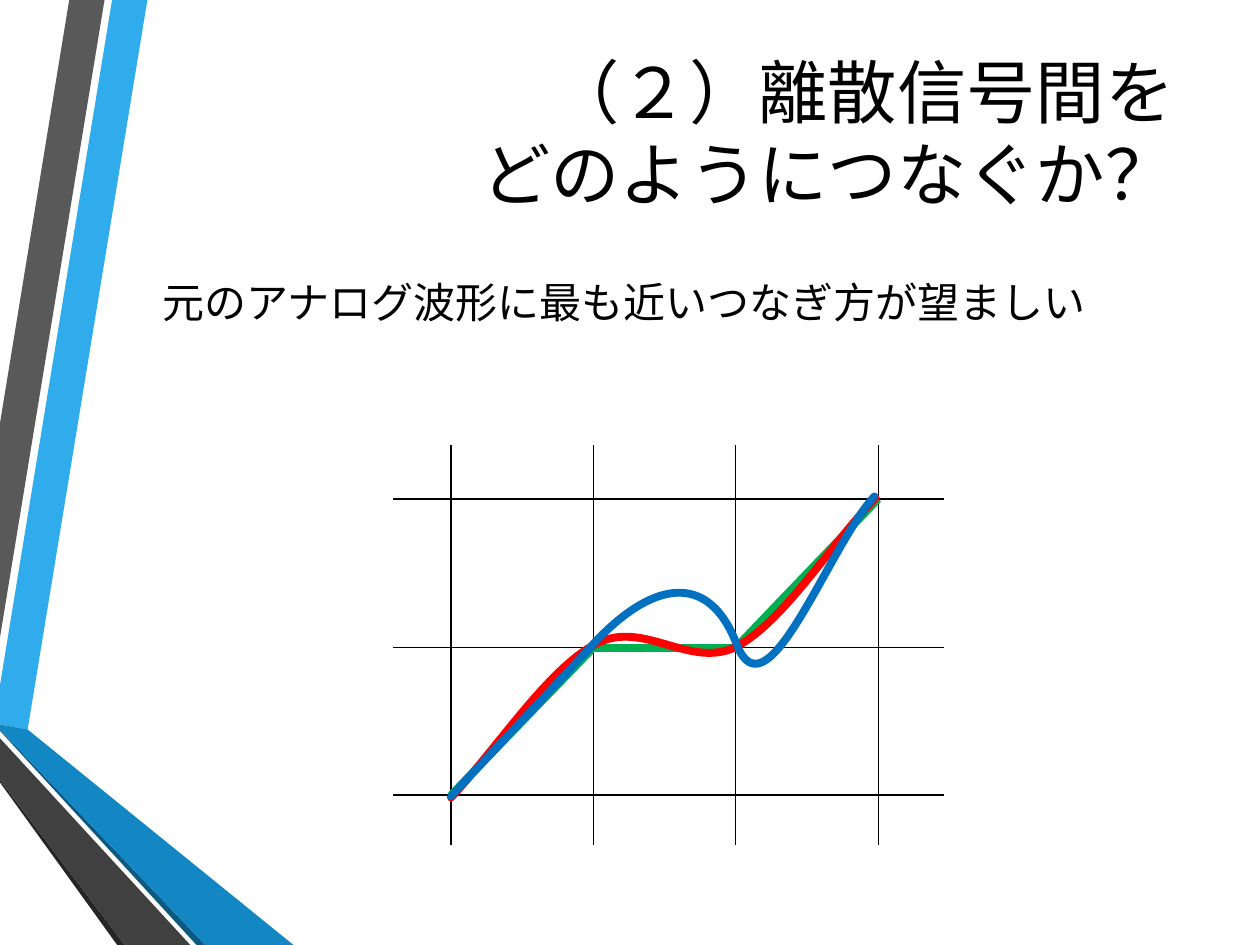
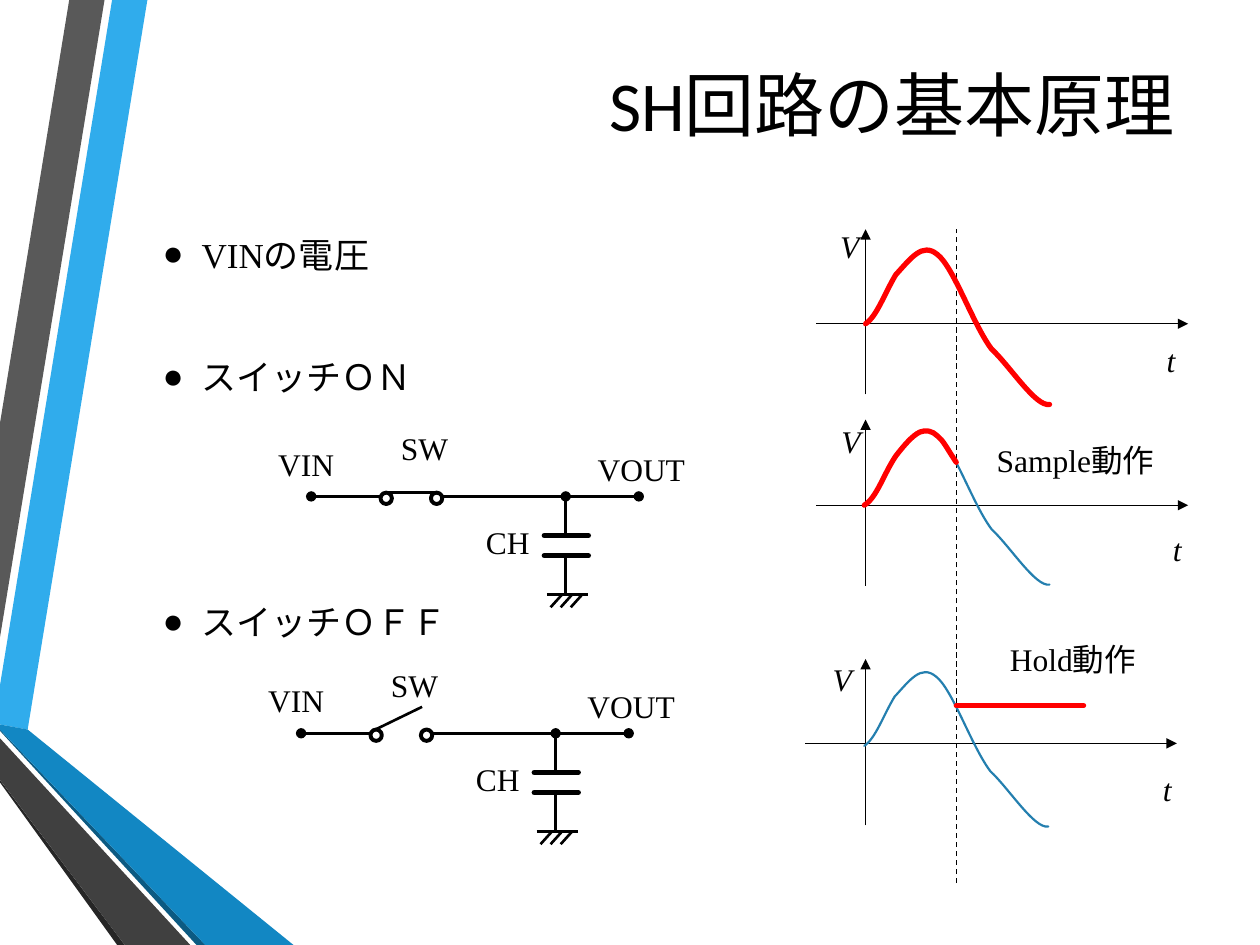
"""Build two slides on joining discrete samples and on the sample-and-hold circuit."""
from dataclasses import dataclass

from lxml.etree import SubElement
from pptx import Presentation
from pptx.dml.color import RGBColor
from pptx.enum.dml import MSO_LINE
from pptx.enum.shapes import MSO_CONNECTOR, MSO_SHAPE
from pptx.enum.text import MSO_ANCHOR, MSO_AUTO_SIZE, PP_ALIGN
from pptx.oxml.ns import qn
from pptx.util import Pt

PX = 9144


@dataclass(frozen=True)
class Theme:
    black: str = "000000"
    white: str = "FFFFFF"
    red: str = "FF0000"
    green: str = "00B050"
    blue: str = "0070C0"
    teal: str = "247FAF"
    heading_font: str = "Calibri"
    text_font: str = "Times New Roman"
    title: float = 40
    long_title: float = 39.6
    title_leading: float = 47
    lead: float = 24
    item: float = 20
    label: float = 18
    hairline: float = 0.75
    thin: float = 1.25
    wire: float = 1.5
    ring: float = 2.25
    bold: float = 3
    heavy: float = 4.5


THEME = Theme()

BANDS = [
    ("30ACEC", [(0, 544), (0, 575), (22, 579), (117, 0), (89, 0)]),
    ("595959", [(83, 0), (55, 0), (0, 336), (0, 506)]),
    ("262626", [(0, 619), (0, 621), (93, 750), (99, 750)]),
    ("0C5A82", [(0, 579), (0, 580), (156, 750), (163, 750)]),
    ("1287C3", [(0, 579), (163, 750), (233, 750), (22, 579), (0, 575)]),
    ("404040", [(0, 619), (99, 750), (151, 750), (0, 586)]),
]

JOIN_TITLE = "（２）離散信号間を\vどのようにつなぐか？"
JOIN_LEAD = "元のアナログ波形に最も近いつなぎ方が望ましい"
GRID_LEFT, GRID_STEP = 358, 113
GRID_ROWS = (396, 514, 631)
LINEAR_JOIN = [(358, 631), (471, 514), (584, 514), (697, 396)]
SMOOTH_JOINS = [
    (THEME.red, [(358, 633), (396, 592), (435, 531), (473, 511), (511, 491),
                 (548, 532), (585, 513), (622, 493), (658, 434), (695, 395)]),
    (THEME.blue, [(358, 632), (396, 591), (429, 557), (472, 510), (516, 463),
                  (562, 451), (585, 512), (609, 572), (658, 433), (694, 394)]),
]

HOLD_TITLE = "SH回路の基本原理"
HOLD_ITEMS = [("VINの電圧", 0), ("スイッチＯＮ", 40), ("スイッチＯＦＦ", 110)]
CIRCUITS = [((239, 582), (96, -21)), ((247, 394), (98, -3))]
CIRCUIT_LABELS = [("VOUT", 215, -42), ("SW", 43, -58), ("VIN", -51, -46), ("CH", 109, 16)]
PLOTS = [
    dict(left=648, zero=257, top=182, bottom=313, t=(916, 266), v=(657, 175)),
    dict(left=648, zero=401, top=333, bottom=465, t=(921, 416), v=(658, 330)),
    dict(left=639, zero=590, top=523, bottom=655, t=(913, 606), v=(651, 519)),
]
AXIS_X, AXIS_LENGTH, HOLD_X = 687, 295, 759
FULL_WAVE = [(0, 0), (9, -6), (15, -24), (24, -39), (36, -52), (45, -65), (57, -55),
             (70, -45), (85, 0), (100, 20), (115, 34), (135, 66), (146, 64)]
SAMPLED_WAVE = [(0, 0), (10, -6), (15, -24), (25, -39), (32, -48), (38, -55), (44, -58),
                (49, -60), (54, -59), (58, -55), (63, -51), (65, -46), (73, -34)]
WAVES = [
    (FULL_WAVE, (687, 257), THEME.red, THEME.bold),
    (FULL_WAVE, (687, 400), THEME.teal, THEME.thin),
    (FULL_WAVE, (686, 592), THEME.teal, THEME.thin),
    (SAMPLED_WAVE, (686, 401), THEME.red, THEME.bold),
]
MODE_LABELS = [("Sample動作", 773, 345), ("Hold動作", 771, 503)]


def rgb(color):
    return RGBColor.from_string(color)


def place(shape, left, top, width, height):
    shape.left, shape.top, shape.width, shape.height = (
        value * PX for value in (left, top, width, height))


def shifted(points, origin):
    return [(x + origin[0], y + origin[1]) for x, y in points]


def format_runs(paragraph, font, size, italic=None):
    for run in paragraph.runs:
        run.font.name, run.font.size, run.font.italic = font, Pt(size), italic
        run.font.color.rgb = rgb(THEME.black)


def style_line(shape, color, weight, round_cap=False):
    shape.line.color.rgb = rgb(color)
    shape.line.width = Pt(weight)
    outline = shape.element.spPr.find(qn("a:ln"))
    if round_cap:
        outline.set("cap", "rnd")
    return outline


def add_line(slide, start, end, color=THEME.black, weight=THEME.hairline,
             head=None, tail=None, dashed=False, round_cap=False):
    connector = slide.shapes.add_connector(
        MSO_CONNECTOR.STRAIGHT, *(value * PX for value in (*start, *end)))
    outline = style_line(connector, color, weight, round_cap)
    if dashed:
        connector.line.dash_style = MSO_LINE.DASH
    for tag, kind in (("a:headEnd", head), ("a:tailEnd", tail)):
        if kind:
            SubElement(outline, qn(tag)).set("type", kind)
    SubElement(connector.element.spPr, qn("a:effectLst"))


def add_outline(slide, points, close):
    builder = slide.shapes.build_freeform(*points[0], scale=PX)
    builder.add_line_segments(points[1:], close=close)
    shape = builder.convert_to_shape()
    shape.shadow.inherit = False
    return shape


def add_curve(slide, points, color, weight):
    shape = add_outline(slide, points, close=False)
    shape.fill.background()
    style_line(shape, color, weight, round_cap=True)
    curve_path = shape.element.find(".//" + qn("a:path"))
    segments = curve_path.findall(qn("a:lnTo"))
    for first in range(0, len(segments), 3):
        curve = SubElement(curve_path, qn("a:cubicBezTo"))
        for segment in segments[first:first + 3]:
            curve.append(segment[0])
            curve_path.remove(segment)


def add_white_shape(slide, kind, left, top, width, height, ringed=False):
    shape = slide.shapes.add_shape(kind, 0, 0, 0, 0)
    place(shape, left, top, width, height)
    shape.shadow.inherit = False
    shape.fill.solid()
    shape.fill.fore_color.rgb = rgb(THEME.white)
    if ringed:
        style_line(shape, THEME.black, THEME.ring)
    else:
        shape.line.fill.background()


def add_label(slide, text, left, top, width, italic=None):
    box = slide.shapes.add_textbox(0, 0, 0, 0)
    place(box, left, top, width, 40)
    box.text_frame.word_wrap = True
    box.text_frame.text = text
    paragraph = box.text_frame.paragraphs[0]
    paragraph.alignment = PP_ALIGN.CENTER
    format_runs(paragraph, THEME.text_font, THEME.label, italic)


def add_bands(slide, layout):
    for color, points in BANDS:
        band = add_outline(slide, points, close=True)
        band.fill.solid()
        band.fill.fore_color.rgb = rgb(color)
        band.line.fill.background()
        layout.shapes.element.append(band.element)


def set_title(slide, text, top, height, size):
    title = slide.shapes.title
    place(title, 92, top, 850, height)
    frame = title.text_frame
    frame.text = text
    frame.auto_size = MSO_AUTO_SIZE.NONE
    frame.vertical_anchor = MSO_ANCHOR.MIDDLE
    paragraph = frame.paragraphs[0]
    paragraph.alignment = PP_ALIGN.RIGHT
    paragraph.line_spacing = Pt(THEME.title_leading)
    format_runs(paragraph, THEME.heading_font, size)


def set_body(slide, items, top, height, font, size, leading, bullet=None):
    body = slide.placeholders[1]
    place(body, 119, top, 858, height)
    frame = body.text_frame
    frame.text = "\n".join(text for text, gap in items)
    frame.auto_size = MSO_AUTO_SIZE.NONE
    for paragraph, (text, gap) in zip(frame.paragraphs, items):
        paragraph.line_spacing = Pt(leading)
        paragraph.space_before, paragraph.space_after = Pt(gap), Pt(6)
        format_runs(paragraph, font, size)
        properties = paragraph._p.get_or_add_pPr()
        properties.set("marL", str(31 * PX))
        properties.set("indent", str(-31 * PX))
        if bullet:
            bullet_color = SubElement(properties, qn("a:buClr"))
            SubElement(bullet_color, qn("a:srgbClr")).set("val", THEME.black)
            SubElement(properties, qn("a:buFont")).set("typeface", font)
            SubElement(properties, qn("a:buChar")).set("char", bullet)
        else:
            SubElement(properties, qn("a:buNone"))


def add_circuit(slide, origin, switch_tip):
    def wire(start, end, weight=THEME.wire, **ends):
        add_line(slide, *shifted([start, end], origin), weight=weight, **ends)

    def patch(kind, left, top, width, height, ringed=False):
        add_white_shape(slide, kind, origin[0] + left, origin[1] + top, width, height, ringed)

    wire((0, 0), (260, 0), head="oval", tail="oval")
    patch(MSO_SHAPE.RECTANGLE, 59, -7, 41, 13)
    wire((59, -3), switch_tip)
    for left in (95, 55):
        patch(MSO_SHAPE.OVAL, left, -3, 9, 9, ringed=True)
    wire((202, 78), (202, 0), tail="oval")
    wire((187, 78), (220, 78))
    for left in range(190, 207, 8):
        wire((left, 88), (left + 9, 78))
    patch(MSO_SHAPE.RECTANGLE, 180, 32, 41, 13)
    for plate in (31, 47):
        wire((185, plate), (220, plate), THEME.bold, round_cap=True)
    for text, left, top in CIRCUIT_LABELS:
        add_label(slide, text, origin[0] + left, origin[1] + top, 94)


def add_plot(slide, plot):
    left, zero = plot["left"], plot["zero"]
    add_line(slide, (left, zero), (left + AXIS_LENGTH, zero), tail="triangle")
    add_line(slide, (AXIS_X, plot["bottom"]), (AXIS_X, plot["top"]), tail="triangle")
    for name in ("t", "v"):
        text = "V" if name == "v" else name
        add_label(slide, text, *plot[name], 22, italic=True)


def fill_join_slide(slide):
    set_title(slide, JOIN_TITLE, 49, 112, THEME.long_title)
    set_body(slide, [(JOIN_LEAD, 0)], 213, 66, THEME.heading_font, THEME.lead, 30)
    for column in range(4):
        x = GRID_LEFT + column * GRID_STEP
        add_line(slide, (x, 353), (x, 671))
    for y in GRID_ROWS:
        add_line(slide, (312, y), (749, y))
    for start, end in zip(LINEAR_JOIN, LINEAR_JOIN[1:]):
        add_line(slide, start, end, THEME.green, THEME.heavy)
    for color, points in SMOOTH_JOINS:
        add_curve(slide, points, color, THEME.heavy)


def fill_hold_slide(slide):
    set_title(slide, HOLD_TITLE, 5, 155, THEME.title)
    set_body(slide, HOLD_ITEMS, 180, 71, THEME.text_font, THEME.item, 24, bullet="●")
    for origin, switch_tip in CIRCUITS:
        add_circuit(slide, origin, switch_tip)
    for plot in PLOTS:
        add_plot(slide, plot)
    add_line(slide, (HOLD_X, 701), (HOLD_X, 182), dashed=True)
    for points, origin, color, weight in WAVES:
        add_curve(slide, shifted(points, origin), color, weight)
    add_line(slide, (HOLD_X, 560), (860, 560), THEME.red, THEME.bold, round_cap=True)
    for text, left, top in MODE_LABELS:
        add_label(slide, text, left, top, 161)


def main():
    presentation = Presentation()
    presentation.slide_width, presentation.slide_height = 1000 * PX, 750 * PX
    layout = presentation.slide_layouts[1]
    join_slide, hold_slide = (presentation.slides.add_slide(layout) for _ in range(2))
    add_bands(join_slide, layout)
    fill_join_slide(join_slide)
    fill_hold_slide(hold_slide)
    presentation.save("out.pptx")


if __name__ == "__main__":
    main()
